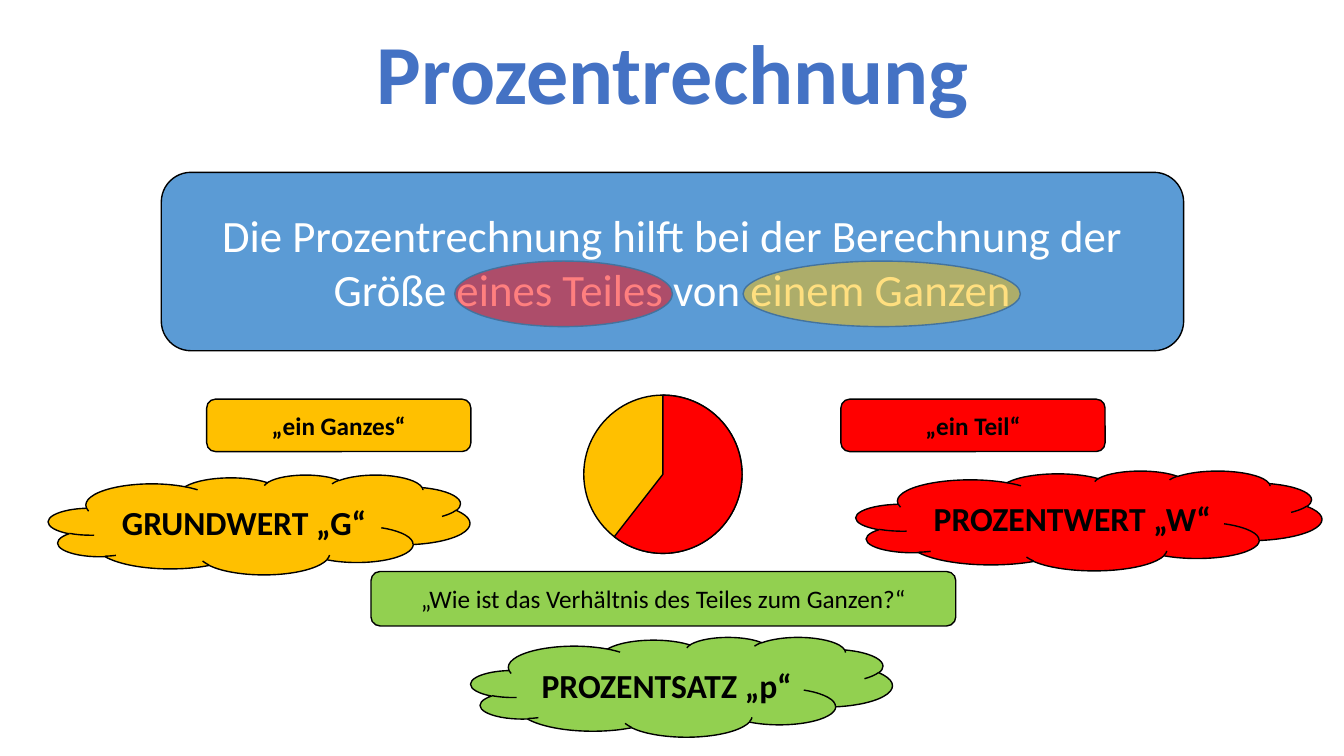
"""Builds the slide that introduces the terms of percentage calculation."""
from pptx import Presentation
from pptx.dml.color import RGBColor
from pptx.enum.shapes import MSO_SHAPE
from pptx.enum.text import MSO_ANCHOR, PP_ALIGN
from pptx.oxml.xmlchemy import OxmlElement
from pptx.util import Inches, Pt

COLORS = {
    "title": "4472C4",
    "statement": "5B9BD5",
    "whole": "FFC000",
    "part": "FF0000",
    "rate": "92D050",
    "black": "000000",
    "white": "FFFFFF",
    "marker_line": "43739E",
}
FONT = "Calibri"
TITLE = "Prozentrechnung"
TITLE_BOX = (3.6, 0.15, 6.14, 1.11)
STATEMENT = "Die Prozentrechnung hilft bei der Berechnung der Größe eines Teiles von einem Ganzen"
STATEMENT_BOX = (1.6, 1.71, 10.14, 1.77)
MARKERS = [("whole", 7.37, 2.75), ("part", 4.51, 2.16)]
MARKER_TOP, MARKER_HEIGHT = 2.59, 0.65
PIE_BOX = (5.79, 3.92, 1.57, 1.57)
PART_DEGREES = 217.9
LABELS = [
    ("whole", "„ein Ganzes“", (2.05, 3.96, 2.62, 0.52), True),
    ("part", "„ein Teil“", (8.34, 3.96, 2.62, 0.52), True),
    ("rate", "„Wie ist das Verhältnis des Teiles zum Ganzen?“", (3.68, 5.67, 5.8, 0.54), False),
]
CLOUDS = [
    ("whole", "GRUNDWERT „G“", (0.48, 4.71, 4.18, 0.99)),
    ("part", "PROZENTWERT „W“", (8.49, 4.67, 4.62, 0.99)),
    ("rate", "PROZENTSATZ „p“", (4.67, 6.32, 4.18, 0.99)),
]


def color(name):
    return RGBColor.from_string(COLORS[name])


def write(shape, text, size, font_color, bold=False):
    frame = shape.text_frame
    frame.word_wrap = True
    frame.vertical_anchor = MSO_ANCHOR.MIDDLE
    paragraph = frame.paragraphs[0]
    paragraph.alignment = PP_ALIGN.CENTER
    run = paragraph.add_run()
    run.text = text
    run.font.name = FONT
    run.font.size = Pt(size)
    run.font.bold = bold
    run.font.color.rgb = color(font_color)


def add_figure(slide, kind, box, fill, line="black"):
    shape = slide.shapes.add_shape(kind, *map(Inches, box))
    shape.shadow.inherit = False
    shape.fill.solid()
    shape.fill.fore_color.rgb = color(fill)
    shape.line.color.rgb = color(line)
    shape.line.width = Pt(1)
    return shape


def add_marker(slide, fill, left, width):
    box = (left, MARKER_TOP, width, MARKER_HEIGHT)
    marker = add_figure(slide, MSO_SHAPE.OVAL, box, fill, "marker_line")
    alpha = OxmlElement("a:alpha")
    alpha.set("val", "50000")
    marker.fill._xPr.find(".//{*}solidFill/{*}srgbClr").append(alpha)


def add_pie(slide):
    add_figure(slide, MSO_SHAPE.OVAL, PIE_BOX, "whole")
    part = add_figure(slide, MSO_SHAPE.PIE, PIE_BOX, "part")
    part.rotation = 270
    part.adjustments[0] = 0
    part.adjustments[1] = PART_DEGREES * 60000 / 100000


def main():
    presentation = Presentation()
    presentation.slide_width = Inches(13.33)
    presentation.slide_height = Inches(7.5)
    slide = presentation.slides.add_slide(presentation.slide_layouts[5])

    title = slide.shapes.title
    title.left, title.top, title.width, title.height = map(Inches, TITLE_BOX)
    write(title, TITLE, 60, "title", True)
    title.text_frame.word_wrap = False

    statement = add_figure(slide, MSO_SHAPE.ROUNDED_RECTANGLE, STATEMENT_BOX, "statement")
    write(statement, STATEMENT, 32, "white")
    for fill, left, width in MARKERS:
        add_marker(slide, fill, left, width)

    add_pie(slide)
    for fill, text, box, bold in LABELS:
        label = add_figure(slide, MSO_SHAPE.ROUNDED_RECTANGLE, box, fill)
        write(label, text, 18, "black", bold)
    for fill, text, box in CLOUDS:
        cloud = add_figure(slide, MSO_SHAPE.CLOUD, box, fill)
        write(cloud, text, 24, "black", True)

    presentation.save("out.pptx")


if __name__ == "__main__":
    main()
